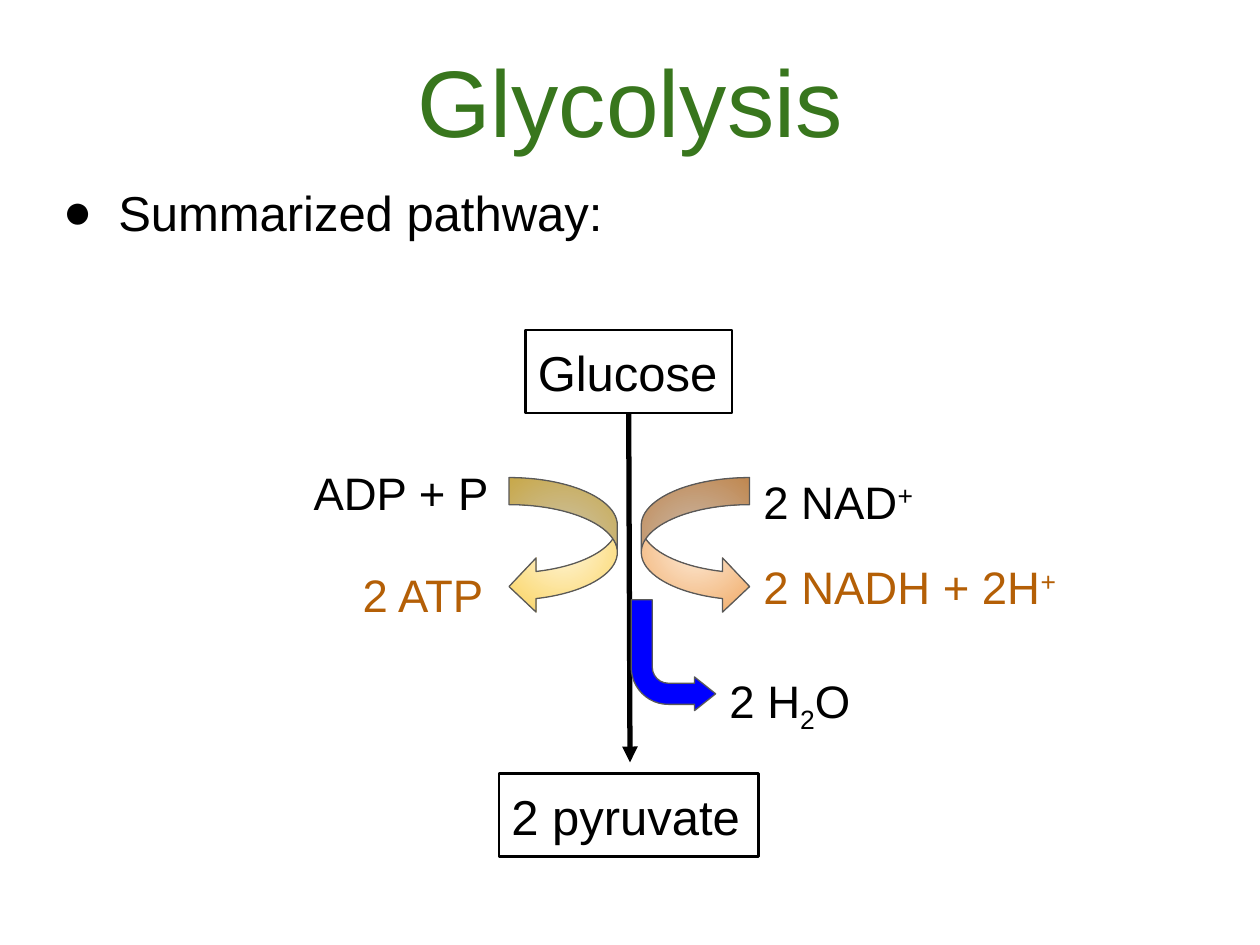
import dataclasses
import typing

import lxml.etree
import pptx
import pptx.dml.color
import pptx.enum.shapes
import pptx.enum.text
import pptx.oxml.ns
import pptx.util

PX = 9144  # EMU per px, 100 px to the inch
FONT = "Arial"
COLORS = {
    "black": "000000", "green": "38761D", "brown": "B45F06",
    "blue": "0000FF", "gray": "595959",
    "cream": "FFF6DB", "gold": "FAD25C", "peach": "FDECDB", "orange": "F0A963",
}
FRAME = {
    "word_wrap": True,
    "auto_size": pptx.enum.text.MSO_AUTO_SIZE.NONE,
    "vertical_anchor": pptx.enum.text.MSO_ANCHOR.TOP,
    **{f"margin_{side}": 10 * PX for side in ("left", "top", "right", "bottom")},
}
LEFT = pptx.enum.text.PP_ALIGN.LEFT
CENTER = pptx.enum.text.PP_ALIGN.CENTER
KIND = pptx.enum.shapes.MSO_SHAPE
Box = tuple[int, int, int, int]
Run = tuple[str, int]  # wording, baseline shift in percent


@dataclasses.dataclass
class Label:
    box: Box
    runs: list[Run]
    size: int = 26
    color: str = "black"
    align: typing.Any = LEFT
    framed: bool = False
    bullet: bool = False


@dataclasses.dataclass
class Arrow:
    box: Box
    kind: typing.Any
    adjust: list[float]
    fills: list[str]
    flip: bool = False
    turn: int = 0


LABELS = [
    Label((25, 24, 950, 83), [("Glycolysis", 0)], 54, "green", CENTER),
    Label((34, 128, 932, 83), [("Summarized pathway:", 0)], 28, bullet=True),
    Label((417, 262, 164, 66), [("Glucose", 0)], 28, framed=True),
    Label((396, 614, 206, 66), [("2 pyruvate", 0)], 28, framed=True),
    Label((239, 359, 164, 54), [("ADP + P", 0)]),
    Label((278, 440, 118, 54), [("2 ATP", 0)], color="brown"),
    Label((596, 366, 164, 54), [("2 NAD", 0), ("+", 30)]),
    Label((596, 434, 289, 54), [("2 NADH + 2H", 0), ("+", 30)], color="brown"),
    Label((569, 524, 164, 54), [("2 H", 0), ("2", -25), ("O", 0)]),
]
CURVE = [0.25, 0.5, 0.25]
ARROWS = [
    Arrow((404, 379, 86, 108), KIND.CURVED_LEFT_ARROW, CURVE, ["cream", "gold"]),
    Arrow((509, 379, 86, 108), KIND.CURVED_LEFT_ARROW, CURVE,
          ["peach", "orange"], flip=True),
    Arrow((501, 476, 67, 88), KIND.BENT_ARROW, [0.25, 0.2, 0.25, 0.44],
          ["blue"], flip=True, turn=180),
]


def assign(target: typing.Any, values: dict) -> None:
    for name, value in values.items():
        setattr(target, name, value)


def scale(box: Box) -> list[int]:
    return [n * PX for n in box]


def rgb(name: str) -> pptx.dml.color.RGBColor:
    return pptx.dml.color.RGBColor.from_string(COLORS[name])


def child(parent: typing.Any, tag: str, **attrs: str) -> typing.Any:
    return lxml.etree.SubElement(parent, pptx.oxml.ns.qn(tag), attrs)


def stroke(line: typing.Any, color: str, width: float) -> None:
    line.color.rgb = rgb(color)
    line.width = pptx.util.Pt(width)


def add_bullet(par: typing.Any) -> None:
    par.line_spacing = 1.15
    props = par._p.get_or_add_pPr()
    props.set("marL", str(50 * PX))
    props.set("indent", str(-44 * PX))
    child(child(props, "a:buClr"), "a:srgbClr", val=COLORS["black"])
    child(props, "a:buFont", typeface=FONT)
    child(props, "a:buChar", char="●")


def add_label(shapes: typing.Any, label: Label) -> None:
    if label.framed:
        shape = shapes.add_shape(KIND.RECTANGLE, *scale(label.box))
        shape.shadow.inherit = False
        shape.fill.background()
        stroke(shape.line, "black", 1.5)
    else:
        shape = shapes.add_textbox(*scale(label.box))
    assign(shape.text_frame, FRAME)
    par = shape.text_frame.paragraphs[0]
    par.alignment = label.align
    if label.bullet:
        add_bullet(par)
    for text, shift in label.runs:
        run = par.add_run()
        run.text = text
        assign(run.font, {"name": FONT, "size": pptx.util.Pt(label.size)})
        run.font.color.rgb = rgb(label.color)
        if shift:
            run.font._element.set("baseline", str(shift * 1000))


def fill_glow(shape: typing.Any, names: list[str]) -> None:
    """Fill with a round gradient, first colour at the centre."""
    shape.fill.gradient()
    for stop, name in zip(shape.fill.gradient_stops, names):
        stop.color.rgb = rgb(name)
    grad = shape._element.spPr.find(pptx.oxml.ns.qn("a:gradFill"))
    grad.remove(grad.find(pptx.oxml.ns.qn("a:lin")))
    sides = dict.fromkeys("ltrb", "50000")
    child(child(grad, "a:path", path="circle"), "a:fillToRect", **sides)


def add_arrow(shapes: typing.Any, arrow: Arrow) -> None:
    shape = shapes.add_shape(arrow.kind, *scale(arrow.box))
    shape.shadow.inherit = False
    shape.rotation = arrow.turn
    for i, value in enumerate(arrow.adjust):
        shape.adjustments[i] = value
    if arrow.flip:
        shape._element.spPr.xfrm.set("flipH", "1")
    if len(arrow.fills) > 1:
        fill_glow(shape, arrow.fills)
    else:
        shape.fill.solid()
        shape.fill.fore_color.rgb = rgb(arrow.fills[0])
    stroke(shape.line, "gray", 0.75)


def add_path(shapes: typing.Any, ends: Box) -> None:
    link = shapes.add_connector(
        pptx.enum.shapes.MSO_CONNECTOR.STRAIGHT, *scale(ends))
    stroke(link.line, "black", 3)
    child(link.line._get_or_add_ln(), "a:tailEnd", type="triangle")
    child(link._element.spPr, "a:effectLst")


def main() -> None:
    deck = pptx.Presentation()
    assign(deck, {"slide_width": 1000 * PX, "slide_height": 750 * PX})
    shapes = deck.slides.add_slide(deck.slide_layouts[6]).shapes
    add_path(shapes, (499, 328, 500, 605))
    for arrow in ARROWS:
        add_arrow(shapes, arrow)
    for label in LABELS:
        add_label(shapes, label)
    deck.save("out.pptx")


if __name__ == "__main__":
    main()
